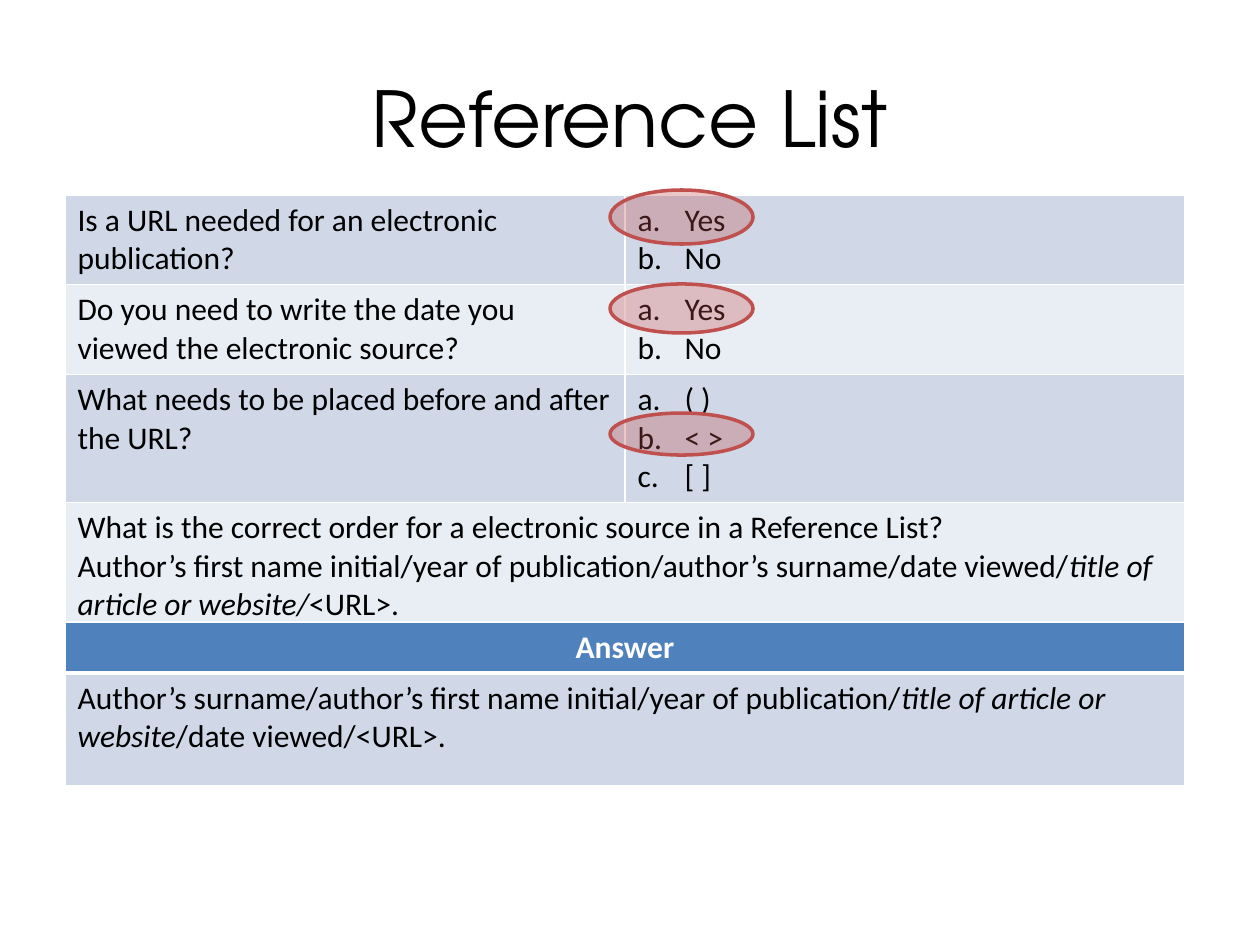
from typing import NamedTuple

from lxml import etree
from pptx import Presentation
from pptx.dml.color import RGBColor
from pptx.enum.shapes import MSO_SHAPE
from pptx.enum.text import MSO_ANCHOR, PP_ALIGN
from pptx.oxml.ns import qn
from pptx.util import Emu, Pt

CENTER, LEFT = PP_ALIGN.CENTER, PP_ALIGN.LEFT
MIDDLE = MSO_ANCHOR.MIDDLE
ELLIPSE = MSO_SHAPE.OVAL
TITLE_ONLY = 5
EMU_PER_PX = 914400 / 126
COLORS = {"text": "000000", "white": "FFFFFF", "header": "4F81BD",
          "band": "D0D8E8", "light": "E9EDF4", "ring": "C0504D"}
TITLE_FONT, BODY_FONT = "TeX Gyre Adventor", "Calibri"
OPTION_INDENT = 47
RING_OPACITY = 31


class Box(NamedTuple):
    left: int
    top: int
    width: int
    height: int


class Phrase(NamedTuple):
    text: str
    italic: bool = False


class Question(NamedTuple):
    text: str
    options: tuple[str, ...]
    height: int


QUESTIONS = [
    Question("Is a URL needed for an electronic publication?", ("Yes", "No"), 89),
    Question("Do you need to write the date you viewed the electronic source?",
             ("Yes", "No"), 90),
    Question("What needs to be placed before and after the URL?",
             ("( )", "< >", "[ ]"), 128),
]
ORDER_HEIGHT = 128
ORDER_QUESTION = [
    [Phrase("What is the correct order for a electronic source in a Reference List?")],
    [Phrase("Author’s first name initial/year of publication/author’s surname/date viewed/"),
     Phrase("title of article or website/", True), Phrase("<URL>.")],
]
ANSWER = [
    [Phrase("Author’s surname/author’s first name initial/year of publication/"),
     Phrase("title of article or website", True), Phrase("/date viewed/<URL>.")],
]
ANSWER_HEIGHTS = [50, 113]
QUESTION_AREA = Box(65, 195, 1120, sum(q.height for q in QUESTIONS) + ORDER_HEIGHT)
ANSWER_AREA = Box(65, 622, 1120, sum(ANSWER_HEIGHTS))
CORRECT_RINGS = [Box(610, 190, 143, 54), Box(610, 413, 143, 42), Box(610, 284, 143, 49)]


def px(length: int) -> Emu:
    return Emu(round(length * EMU_PER_PX))


def place(box: Box) -> list[Emu]:
    return [px(length) for length in box]


def color(name: str) -> RGBColor:
    return RGBColor.from_string(COLORS[name])


def add_table(slide, area: Box, heights: list[int], columns: int):
    table = slide.shapes.add_table(len(heights), columns, *place(area)).table
    table.first_row = table.horz_banding = False
    for row, height in zip(table.rows, heights):
        row.height = px(height)
    for column in table.columns:
        column.width = px(area.width // columns)
    return table


def style_cell(cell, fill: str, top: int = 1, bottom: int = 1) -> None:
    cell.fill.solid()
    cell.fill.fore_color.rgb = color(fill)
    properties = cell._tc.get_or_add_tcPr()
    borders = [("lnL", 1), ("lnR", 1), ("lnT", top), ("lnB", bottom)]
    for position, (side, width) in enumerate(borders):
        line = etree.Element(qn(f"a:{side}"), w=str(Pt(width)))
        solid = etree.SubElement(line, qn("a:solidFill"))
        etree.SubElement(solid, qn("a:srgbClr"), val=COLORS["white"])
        properties.insert(position, line)


def write(cell, paragraphs: list[list[Phrase]], text_color: str = "text",
          bold: bool = False, align=LEFT, lettered: bool = False) -> None:
    frame = cell.text_frame
    for index, phrases in enumerate(paragraphs):
        paragraph = frame.add_paragraph() if index else frame.paragraphs[0]
        paragraph.alignment = align
        if lettered:
            properties = paragraph._p.get_or_add_pPr()
            properties.set("marL", str(px(OPTION_INDENT)))
            properties.set("indent", str(-px(OPTION_INDENT)))
            etree.SubElement(properties, qn("a:buFont"), typeface="+mj-lt")
            etree.SubElement(properties, qn("a:buAutoNum"), type="alphaLcPeriod")
        for phrase in phrases:
            run = paragraph.add_run()
            run.text = phrase.text
            run.font.name, run.font.size = BODY_FONT, Pt(18)
            run.font.bold, run.font.italic = bold, phrase.italic
            run.font.color.rgb = color(text_color)


def add_ring(slide, box: Box) -> None:
    ring = slide.shapes.add_shape(ELLIPSE, *place(box))
    ring.shadow.inherit = False
    ring.fill.solid()
    ring.fill.fore_color.rgb = color("ring")
    tint = ring._element.spPr.find(qn("a:solidFill"))[0]
    etree.SubElement(tint, qn("a:alpha"), val=str(RING_OPACITY * 1000))
    ring.line.color.rgb = color("ring")
    ring.line.width = Pt(2)


def main() -> None:
    deck = Presentation()
    deck.slide_width, deck.slide_height = px(1260), px(945)
    slide = deck.slides.add_slide(deck.slide_layouts[TITLE_ONLY])

    # Title
    title = slide.shapes.title
    title.left, title.top, title.width, title.height = place(Box(63, 38, 1134, 157))
    title.text_frame.text = "Reference List"
    title.text_frame.vertical_anchor = MIDDLE
    heading = title.text_frame.paragraphs[0]
    heading.alignment = CENTER
    heading_font = heading.runs[0].font
    heading_font.name, heading_font.size = TITLE_FONT, Pt(44)
    heading_font.color.rgb = color("text")

    # Questions with lettered options, then the ordering question
    heights = [question.height for question in QUESTIONS] + [ORDER_HEIGHT]
    quiz = add_table(slide, QUESTION_AREA, heights, 2)
    for row, question in enumerate(QUESTIONS):
        fill = "light" if row % 2 else "band"
        prompt, choices = quiz.cell(row, 0), quiz.cell(row, 1)
        write(prompt, [[Phrase(question.text)]])
        write(choices, [[Phrase(option)] for option in question.options], lettered=True)
        style_cell(prompt, fill)
        style_cell(choices, fill)
    order = quiz.cell(len(QUESTIONS), 0)
    order.merge(quiz.cell(len(QUESTIONS), 1))
    write(order, ORDER_QUESTION)
    style_cell(order, "light")

    # Answer to the ordering question
    answer = add_table(slide, ANSWER_AREA, ANSWER_HEIGHTS, 1)
    write(answer.cell(0, 0), [[Phrase("Answer")]], "white", bold=True, align=CENTER)
    style_cell(answer.cell(0, 0), "header", bottom=3)
    write(answer.cell(1, 0), ANSWER)
    style_cell(answer.cell(1, 0), "band", top=3)

    # Rings around the correct options
    for box in CORRECT_RINGS:
        add_ring(slide, box)

    deck.save("out.pptx")


if __name__ == "__main__":
    main()
